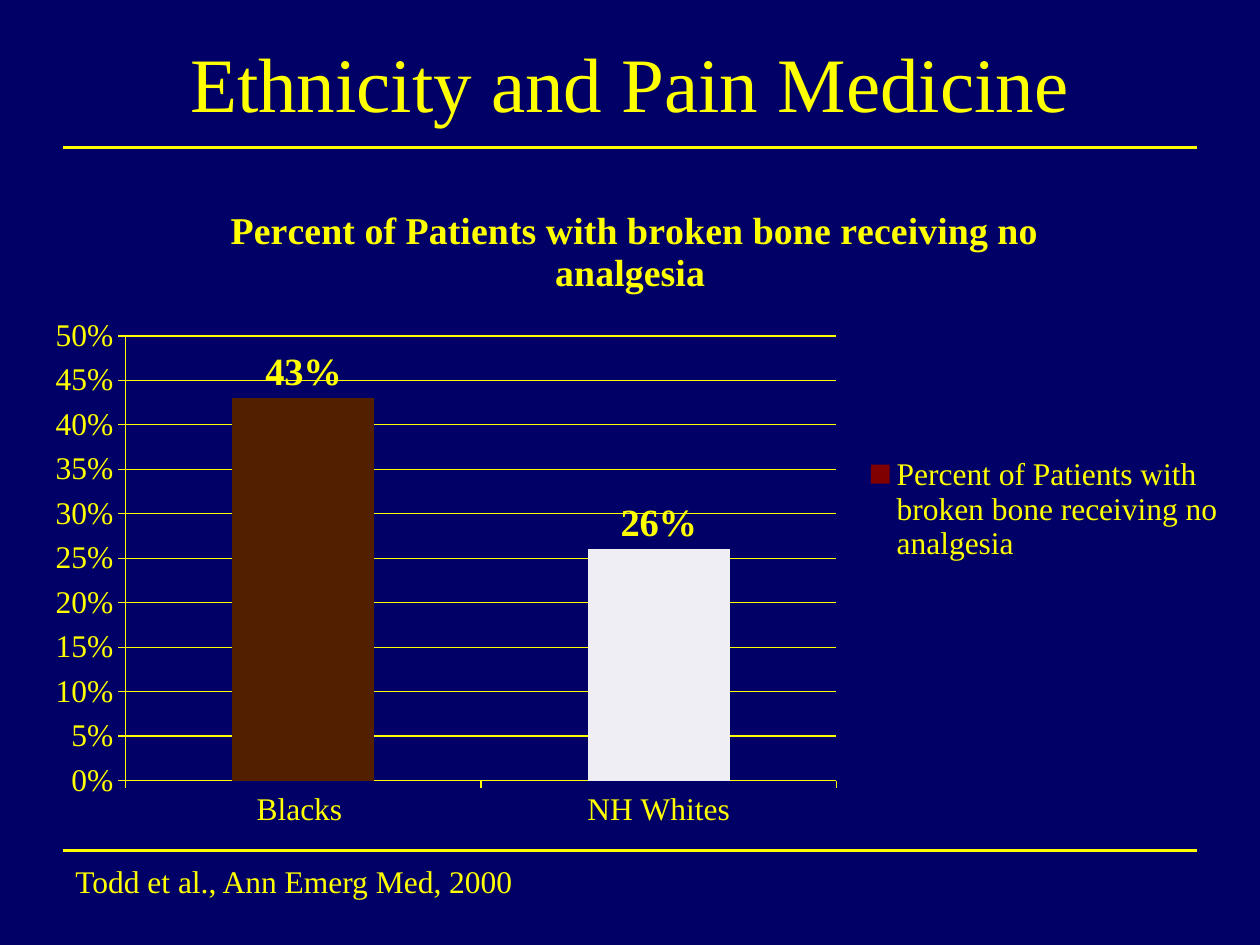
from lxml.etree import SubElement
from pptx import Presentation
from pptx.chart.data import CategoryChartData
from pptx.dml.color import RGBColor
from pptx.enum.chart import (XL_CHART_TYPE, XL_LABEL_POSITION,
                             XL_LEGEND_POSITION, XL_TICK_MARK)
from pptx.enum.shapes import MSO_CONNECTOR
from pptx.enum.text import MSO_ANCHOR, PP_ALIGN
from pptx.oxml.ns import qn
from pptx.util import Inches, Pt

COLORS = {
    "back": "000066",
    "text": "FFFF00",
    "series": "800000",
    "blacks": "521F01",
    "whites": "EEEEF4",
}
FONT = "Times New Roman"
MEASURE = "Percent of Patients with broken bone receiving no analgesia "


class Deck:
    def __init__(self):
        self.prs = Presentation()
        self.prs.slide_width = Inches(10)
        self.prs.slide_height = Inches(7.5)
        self.slide = self.prs.slides.add_slide(self.prs.slide_layouts[5])
        self.paint(self.slide.background.fill, "back")

    def paint(self, fill, color):
        fill.solid()
        fill.fore_color.rgb = RGBColor.from_string(COLORS[color])

    def style(self, font, size, bold=False):
        font.name = FONT
        font.size = Pt(size)
        font.bold = bold
        font.color.rgb = RGBColor.from_string(COLORS["text"])

    def title(self, text, left, top, width, height):
        box = self.slide.shapes.title
        box.left, box.top = Inches(left), Inches(top)
        box.width, box.height = Inches(width), Inches(height)
        frame = box.text_frame
        frame.text = text
        frame.vertical_anchor = MSO_ANCHOR.MIDDLE
        para = frame.paragraphs[0]
        para.alignment = PP_ALIGN.CENTER
        self.style(para.runs[0].font, 44)

    def text(self, text, left, top, width, height):
        box = self.slide.shapes.add_textbox(
            Inches(left), Inches(top), Inches(width), Inches(height))
        frame = box.text_frame
        frame.word_wrap = True
        frame.text = text
        self.style(frame.paragraphs[0].runs[0].font, 18)

    def rule(self, left, right, top):
        line = self.slide.shapes.add_connector(
            MSO_CONNECTOR.STRAIGHT,
            Inches(left), Inches(top), Inches(right), Inches(top))
        line.line.width = Pt(1.5)
        line.line.color.rgb = RGBColor.from_string(COLORS["text"])
        SubElement(line._element.spPr, qn("a:effectLst"))

    def chart(self, name, bars, left, top, width, height):
        """Draw one column per (label, value, color) in bars."""
        data = CategoryChartData(number_format="0%")
        data.categories = [label for label, _, _ in bars]
        data.add_series(name, [value for _, value, _ in bars])
        chart = self.slide.shapes.add_chart(
            XL_CHART_TYPE.COLUMN_CLUSTERED, Inches(left), Inches(top),
            Inches(width), Inches(height), data).chart
        self.style(chart.font, 18)

        chart.has_title = True
        frame = chart.chart_title.text_frame
        frame.text = name
        self.style(frame.paragraphs[0].runs[0].font, 21.6, True)
        chart.chart_title.include_in_layout = False

        chart.has_legend = True
        chart.legend.position = XL_LEGEND_POSITION.RIGHT
        chart.legend.include_in_layout = False

        line_color = RGBColor.from_string(COLORS["text"])
        scale = chart.value_axis
        scale.minimum_scale, scale.maximum_scale = 0, 0.5
        scale.major_unit = 0.05
        scale.has_major_gridlines = True
        scale.major_gridlines.format.line.color.rgb = line_color
        scale.tick_labels.number_format = "0%"
        scale.tick_labels.number_format_is_linked = False
        for axis in (scale, chart.category_axis):
            axis.major_tick_mark = XL_TICK_MARK.OUTSIDE
            axis.format.line.color.rgb = line_color

        plot = chart.plots[0]
        plot.gap_width = 150
        plot.vary_by_categories = False
        series = plot.series[0]
        self.paint(series.format.fill, "series")
        for spot, (_, _, color) in enumerate(bars):
            self.paint(series.points[spot].format.fill, color)
        labels = series.data_labels
        labels.show_value = True
        labels.position = XL_LABEL_POSITION.OUTSIDE_END
        labels.number_format = "0%"
        labels.number_format_is_linked = False
        self.style(labels.font, 22, True)


def main():
    deck = Deck()
    deck.title("Ethnicity and Pain Medicine", 0.75, 0.02, 8.5, 1.25)
    bars = [("Blacks ", 0.43, "blacks"), ("NH Whites", 0.26, "whites")]
    deck.chart(MEASURE, bars, 0.25, 1.42, 9.58, 5.25)
    for top in (1.17, 6.75):
        deck.rule(0.5, 9.5, top)
    deck.text("Todd et al., Ann Emerg Med, 2000", 0.5, 6.79, 9.08, 0.4)
    deck.prs.save("out.pptx")


if __name__ == "__main__":
    main()
